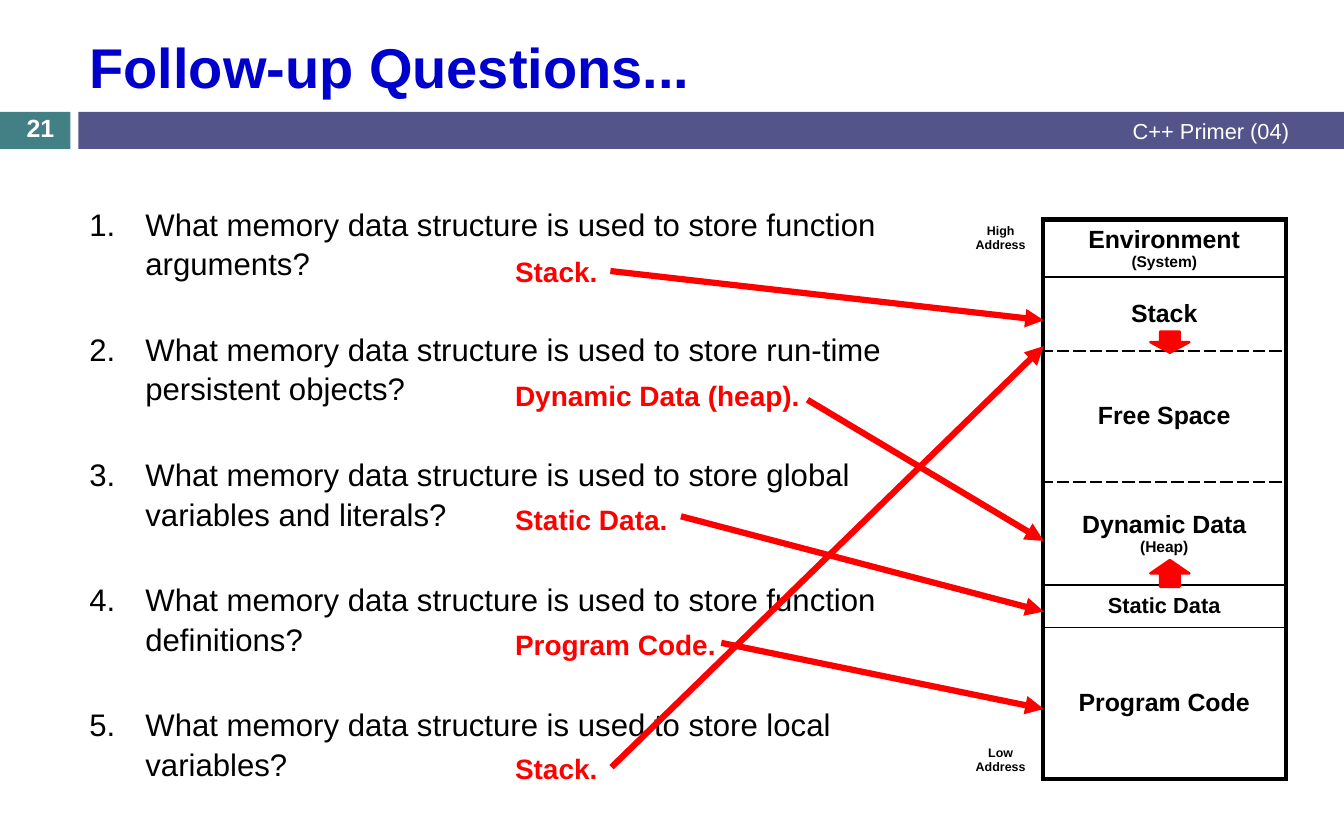
from lxml.etree import SubElement
from pptx import Presentation
from pptx.dml.color import RGBColor
from pptx.enum.shapes import MSO_CONNECTOR as Connector, MSO_SHAPE as Shape
from pptx.enum.text import MSO_ANCHOR as Anchor, MSO_AUTO_SIZE as AutoSize, PP_ALIGN as Align
from pptx.oxml.ns import qn
from pptx.util import Inches, Pt

BLACK = RGBColor(0x00, 0x00, 0x00)
WHITE = RGBColor(0xFF, 0xFF, 0xFF)
BLUE = RGBColor(0x00, 0x00, 0xCC)
RED = RGBColor(0xFF, 0x00, 0x00)
TEAL = RGBColor(0x43, 0x80, 0x86)
INDIGO = RGBColor(0x53, 0x54, 0x8A)
FONT = "Arial"

QUESTIONS = [f"What memory data structure is used to store {ending}?" for ending in (
    "function arguments", "run-time persistent objects", "global variables and literals",
    "function definitions", "local variables")]

# Answer, start of its arrow, height at which the arrow meets the memory map
ANSWERS = [
    ("Stack.", (5.45, 2.42), 2.86),
    ("Dynamic Data (heap).", (7.21, 3.57), 4.83),
    ("Static Data.", (6.08, 4.61), 5.46),
    ("Program Code.", (6.44, 5.74), 6.33),
    ("Stack.", (5.46, 6.85), 3.09),
]
ANSWER_LEFT, ANSWER_TOP, ANSWER_STEP = 4.5, 2.22, 1.11
MAP_EDGE = 9.32

# Row height, lines with their sizes, width and dash of the border below
MEMORY_ROWS = [
    (0.5, [("Environment", 16), ("(System)", 10)], 1, "solid"),
    (0.66, [("Stack", 16)], 1, "lgDash"),
    (1.17, [("Free Space", 16)], 1, "lgDash"),
    (0.92, [("Dynamic Data", 16), ("(Heap)", 10)], 1, "solid"),
    (0.35, [("Static Data", 14)], 1, "solid"),
    (1.35, [("Program Code", 16)], 3, "solid"),
]


def write_text(frame, lines, size=18, color=BLACK, bold=False, align=Align.LEFT,
               anchor=Anchor.TOP):
    """Fill a text frame; a line is a string or a (string, size) pair."""
    frame.word_wrap = True
    frame.vertical_anchor = anchor
    for index, line in enumerate(lines):
        text, line_size = (line, size) if isinstance(line, str) else line
        paragraph = frame.paragraphs[0] if index == 0 else frame.add_paragraph()
        paragraph.alignment = align
        run = paragraph.add_run()
        run.text = text
        run.font.name = FONT
        run.font.size = Pt(line_size)
        run.font.bold = bold
        run.font.color.rgb = color


def number_paragraphs(frame):
    """Turn the paragraphs into a numbered list with a hanging indent."""
    for paragraph in frame.paragraphs:
        paragraph.space_after = Pt(30)
        paragraph.line_spacing = 1.05
        properties = paragraph._p.get_or_add_pPr()
        properties.set("marL", str(Inches(0.5)))
        properties.set("indent", str(-Inches(0.5)))
        SubElement(properties, qn("a:buFont"), typeface=FONT)
        SubElement(properties, qn("a:buAutoNum"), type="arabicPeriod")


def set_borders(cell, borders):
    """Draw black borders from (side, width, dash), in the order L, R, T, B."""
    properties = cell._tc.get_or_add_tcPr()
    for side, width, dash in borders:
        line = SubElement(properties, qn(f"a:ln{side}"), w=str(Pt(width)))
        fill = SubElement(line, qn("a:solidFill"))
        SubElement(fill, qn("a:srgbClr"), val=str(BLACK))
        SubElement(line, qn("a:prstDash"), val=dash)


class SlideBuilder:
    def __init__(self, presentation):
        self.slide = presentation.slides.add_slide(presentation.slide_layouts[5])
        self.shapes = self.slide.shapes

    def title(self, text, left, top, width, height):
        shape = self.shapes.title
        shape.left, shape.top = Inches(left), Inches(top)
        shape.width, shape.height = Inches(width), Inches(height)
        shape.text_frame.auto_size = AutoSize.NONE
        write_text(shape.text_frame, [text], size=36, color=BLUE, bold=True,
                   anchor=Anchor.MIDDLE)

    def text(self, lines, left, top, width, height, **style):
        box = self.shapes.add_textbox(Inches(left), Inches(top), Inches(width), Inches(height))
        write_text(box.text_frame, lines, **style)
        return box.text_frame

    def block(self, kind, left, top, width, height, color, outline=None):
        shape = self.shapes.add_shape(kind, Inches(left), Inches(top),
                                      Inches(width), Inches(height))
        shape.shadow.inherit = False
        shape.fill.solid()
        shape.fill.fore_color.rgb = color
        if outline:
            shape.line.color.rgb = color
            shape.line.width = Pt(outline)
        else:
            shape.line.fill.background()

    def arrow(self, start, end):
        connector = self.shapes.add_connector(Connector.STRAIGHT,
                                              *map(Inches, start), *map(Inches, end))
        connector.line.color.rgb = RED
        connector.line.width = Pt(4)
        SubElement(connector.line._get_or_add_ln(), qn("a:tailEnd"), type="triangle")
        SubElement(connector._element.spPr, qn("a:effectLst"))

    def memory_map(self, left, top, widths):
        height = sum(row[0] for row in MEMORY_ROWS)
        table = self.shapes.add_table(len(MEMORY_ROWS), 2, Inches(left), Inches(top),
                                      Inches(sum(widths)), Inches(height)).table
        table.first_row = table.horz_banding = False
        for column, width in zip(table.columns, widths):
            column.width = Inches(width)

        above = (3, "solid")
        for index, (row_height, lines, *below) in enumerate(MEMORY_ROWS):
            table.rows[index].height = Inches(row_height)
            label, region = table.cell(index, 0), table.cell(index, 1)
            set_borders(label, [("R", 3, "solid")])
            label.fill.background()
            set_borders(region, [("L", 3, "solid"), ("R", 3, "solid"),
                                 ("T", *above), ("B", *below)])
            region.fill.solid()
            region.fill.fore_color.rgb = WHITE
            above = below
            for cell in (label, region):
                cell.margin_top = cell.margin_bottom = Inches(0.04)
                cell.margin_left = cell.margin_right = Inches(0.05)
            self.cell_text(region, lines, Anchor.MIDDLE)

        self.cell_text(table.cell(0, 0), [("High", 8), ("Address", 8)], Anchor.TOP)
        self.cell_text(table.cell(len(MEMORY_ROWS) - 1, 0),
                       [("Low", 8), ("Address", 8)], Anchor.BOTTOM)

    def cell_text(self, cell, lines, anchor):
        write_text(cell.text_frame, lines, bold=True, align=Align.CENTER)
        cell.vertical_anchor = anchor


def main():
    presentation = Presentation()
    presentation.slide_width, presentation.slide_height = Inches(12), Inches(7.5)
    builder = SlideBuilder(presentation)

    builder.block(Shape.RECTANGLE, 0, 1, 0.63, 0.33, TEAL)
    builder.block(Shape.RECTANGLE, 0.7, 1, 11.3, 0.33, INDIGO)
    builder.title("Follow-up Questions...", 0.7, 0.19, 10.91, 0.8)
    builder.text(["C++ Primer (04)"], 4.5, 0.99, 7.11, 0.35, size=14, color=WHITE,
                 align=Align.RIGHT, anchor=Anchor.MIDDLE)
    builder.text(["21"], 0, 0.99, 0.72, 0.3, size=16, color=WHITE, bold=True,
                 align=Align.CENTER, anchor=Anchor.MIDDLE)

    number_paragraphs(builder.text(QUESTIONS, 0.7, 1.77, 7.63, 5.37, size=20))
    builder.memory_map(8.56, 1.96, (0.75, 2.17))

    builder.block(Shape.DOWN_ARROW, 10.27, 2.96, 0.35, 0.19, RED, outline=1.5)
    builder.block(Shape.UP_ARROW, 10.27, 5, 0.35, 0.24, RED, outline=1.5)
    for index, (answer, start, end_height) in enumerate(ANSWERS):
        builder.text([answer], ANSWER_LEFT, ANSWER_TOP + index * ANSWER_STEP, 3.79, 0.4,
                     color=RED, bold=True)
        builder.arrow(start, (MAP_EDGE, end_height))

    presentation.save("out.pptx")


if __name__ == "__main__":
    main()
